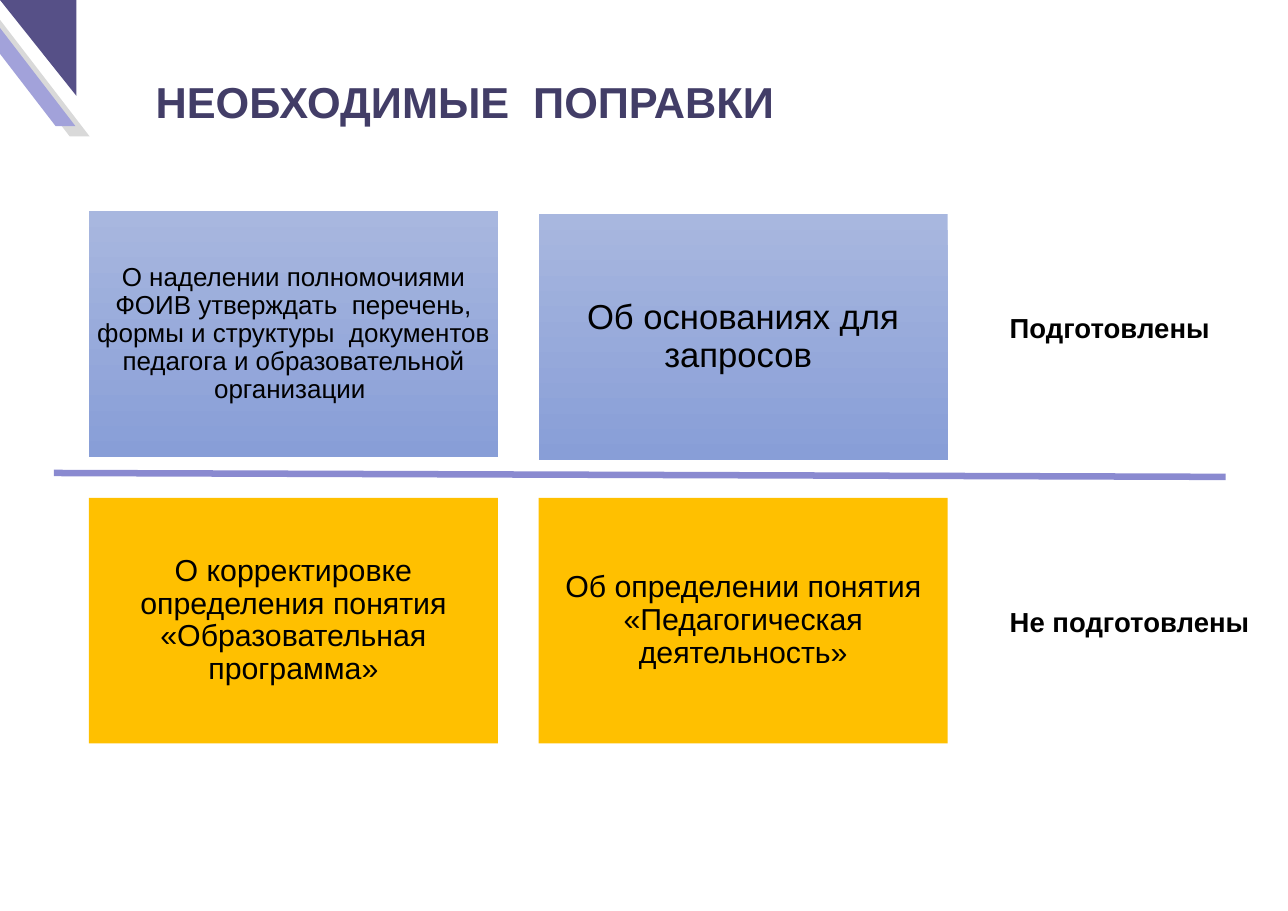
"""Build the slide that sorts the needed amendments into prepared and not prepared."""
from dataclasses import dataclass

from lxml.etree import SubElement
from pptx import Presentation
from pptx.dml.color import RGBColor
from pptx.enum.shapes import MSO_CONNECTOR, MSO_SHAPE
from pptx.enum.text import MSO_ANCHOR, PP_ALIGN
from pptx.oxml.ns import qn
from pptx.util import Pt


@dataclass(frozen=True)
class Theme:
    font: str = "Arial"
    title: str = "423D67"
    text: str = "000000"
    shade: str = "D9D9D9"
    stripe: str = "A2A2DA"
    corner: str = "565087"
    prepared: tuple = ("A8B7DF", "889ED7")
    pending: tuple = ("FFC000",)
    divider: str = "8A8AD0"
    title_size: float = 40
    label_size: float = 25.4
    large_size: float = 32
    medium_size: float = 28
    small_size: float = 24


theme = Theme()


def write_text(frame, text, size, color=theme.text, bold=False, wrap=True, inset=None,
               align=PP_ALIGN.LEFT, anchor=MSO_ANCHOR.TOP, line_spacing=1.0):
    frame.word_wrap = wrap
    frame.vertical_anchor = anchor
    if inset is not None:
        frame.margin_left = frame.margin_right = Pt(inset)
        frame.margin_top = frame.margin_bottom = Pt(inset)
    para = frame.paragraphs[0]
    para.alignment = align
    para.line_spacing = line_spacing
    span = para.add_run()
    span.text = text
    span.font.name = theme.font
    span.font.size = Pt(size)
    span.font.bold = bold
    span.font.color.rgb = RGBColor.from_string(color)


def paint(shape, colors):
    shape.shadow.inherit = False
    shape.line.fill.background()
    if len(colors) == 1:
        shape.fill.solid()
        shape.fill.fore_color.rgb = RGBColor.from_string(colors[0])
        return
    shape.fill.gradient()
    shape.fill.gradient_angle = 270
    for stop, color in zip(shape.fill.gradient_stops, colors):
        stop.color.rgb = RGBColor.from_string(color)


deck = Presentation()
deck.slide_width = Pt(1190.16)
deck.slide_height = Pt(841.68)
page = deck.slides.add_slide(deck.slide_layouts[6])

corner_pieces = [
    (theme.shade, [(0, 18.3), (82.8, 126), (64.4, 126), (0, 42.1)]),
    (theme.stripe, [(0, 25.8), (69.8, 116.6), (51.5, 116.6), (0, 49.7)]),
    (theme.corner, [(0, 0), (70.6, 0), (70.6, 88.6)]),
]
for color, points in corner_pieces:
    outline = [(Pt(x), Pt(y)) for x, y in points]
    builder = page.shapes.build_freeform(*outline[0])
    builder.add_line_segments(outline[1:])
    paint(builder.convert_to_shape(), [color])

title = page.shapes.add_textbox(Pt(136.8), Pt(66.2), Pt(708.5), Pt(55.4))
write_text(title.text_frame, "НЕОБХОДИМЫЕ  ПОПРАВКИ", theme.title_size, color=theme.title, bold=True)

box_left, column_step, box_width, box_height = 82.1, 415.6, 378, 226.8
amendments = [
    (0, 195.1, theme.prepared, theme.small_size, 7.2,
     "О наделении полномочиями ФОИВ утверждать  перечень, формы и структуры  документов "
     "педагога и образовательной организации "),
    (1, 198, theme.prepared, theme.large_size, 9.6, "Об основаниях для запросов "),
    (0, 460.1, theme.pending, theme.medium_size, 8.4,
     "О корректировке определения понятия «Образовательная программа»"),
    (1, 460.1, theme.pending, theme.medium_size, 8.4,
     "Об определении понятия «Педагогическая деятельность»"),
]
for column, top, colors, size, inset, text in amendments:
    box = page.shapes.add_shape(MSO_SHAPE.RECTANGLE, Pt(box_left + column * column_step), Pt(top),
                                Pt(box_width), Pt(box_height))
    paint(box, colors)
    write_text(box.text_frame, text, size, inset=inset, align=PP_ALIGN.CENTER,
               anchor=MSO_ANCHOR.MIDDLE, line_spacing=0.9)

divider = page.shapes.add_connector(MSO_CONNECTOR.STRAIGHT, Pt(49.7), Pt(437), Pt(1132.6), Pt(440.6))
divider.line.color.rgb = RGBColor.from_string(theme.divider)
divider.line.width = Pt(6)
SubElement(divider._element.spPr, qn("a:effectLst"))

for text, top, width in [("Подготовлены", 283.7, 208.1), ("Не подготовлены", 555.8, 245.5)]:
    label = page.shapes.add_textbox(Pt(925.9), Pt(top), Pt(width), Pt(38.2))
    write_text(label.text_frame, text, theme.label_size, bold=True, wrap=False)

deck.save("out.pptx")
